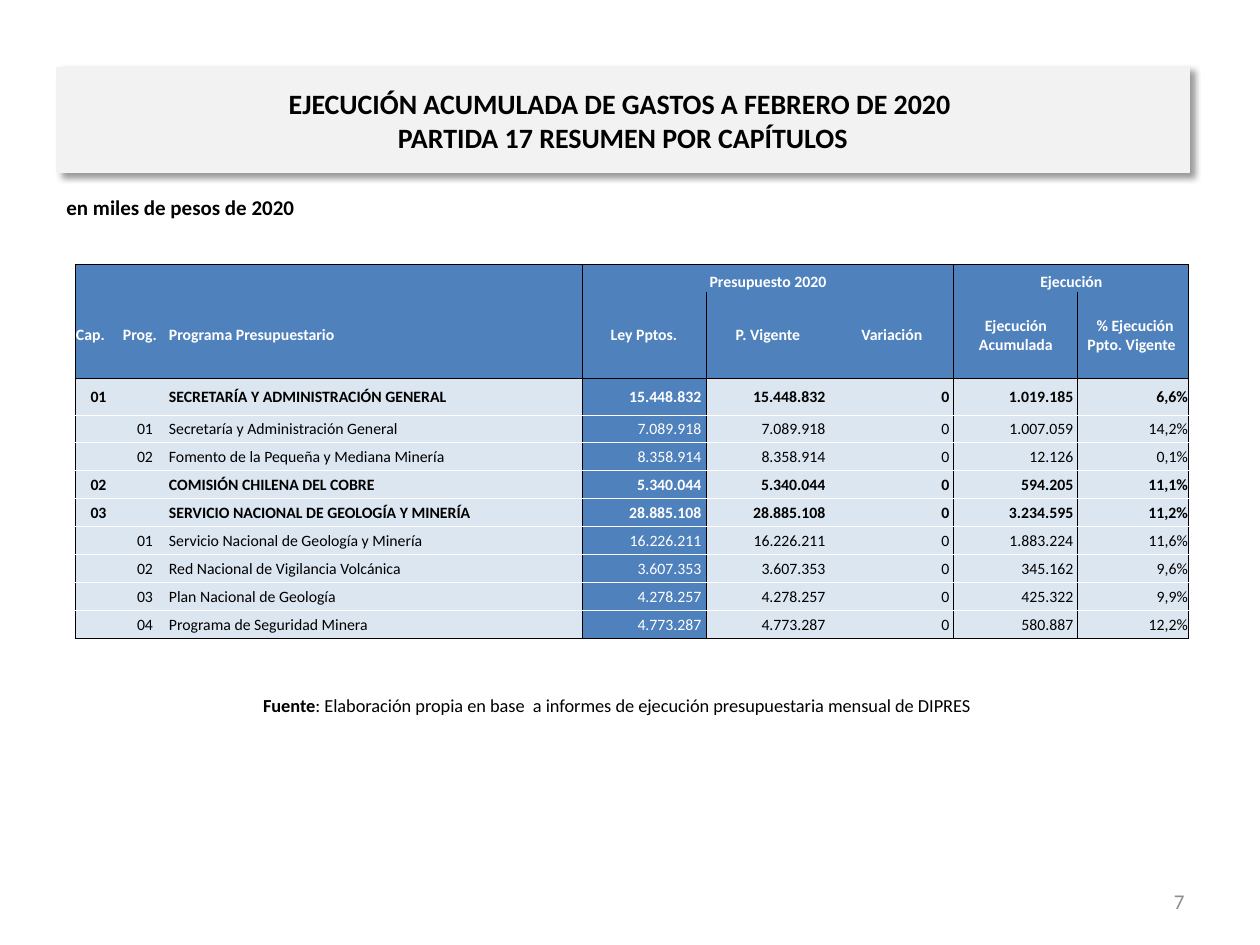
from dataclasses import dataclass

from lxml import etree
from pptx import Presentation
from pptx.dml.color import RGBColor
from pptx.enum.text import MSO_ANCHOR, MSO_AUTO_SIZE, PP_ALIGN
from pptx.oxml import parse_xml
from pptx.oxml.ns import nsdecls, qn
from pptx.util import Emu, Pt

LEFT, CENTER, RIGHT = PP_ALIGN.LEFT, PP_ALIGN.CENTER, PP_ALIGN.RIGHT
JUSTIFY = PP_ALIGN.JUSTIFY
TOP, MIDDLE, BOTTOM = MSO_ANCHOR.TOP, MSO_ANCHOR.MIDDLE, MSO_ANCHOR.BOTTOM
GROW = MSO_AUTO_SIZE.SHAPE_TO_FIT_TEXT
EMU_PER_PX = 914400 / 126
NO_GRID_STYLE = "{2D5ABB26-0587-4C30-8999-92F81FD0307C}"


@dataclass(frozen=True)
class Theme:
    font: str = "Calibri"
    black: str = "000000"
    white: str = "FFFFFF"
    banner: str = "F2F2F2"
    blue: str = "4F81BD"
    pale: str = "DCE6F1"
    gray: str = "8C8C8C"
    title_size: float = 16
    note_size: float = 12
    source_size: float = 10.5
    table_size: float = 9
    border_width: float = 0.5


def px(length):
    return Emu(round(length * EMU_PER_PX))


def rgb(color):
    return RGBColor.from_string(color)


class SlideBuilder:
    def __init__(self, page, theme):
        self.page = page
        self.theme = theme

    def place(self, box, left, top, width, height):
        box.left, box.top = px(left), px(top)
        box.width, box.height = px(width), px(height)

    def span(self, para, text, size, color, bold=False):
        span = para.add_run()
        span.text = text
        span.font.name = self.theme.font
        span.font.size = Pt(size)
        span.font.bold = bold
        span.font.color.rgb = rgb(color)

    def title(self, lines, *place):
        theme = self.theme
        box = self.page.shapes.title
        self.place(box, *place)
        box.fill.solid()
        box.fill.fore_color.rgb = rgb(theme.banner)
        box.line.color.rgb = rgb(theme.banner)
        box.line.width = Pt(0.75)
        box._element.spPr.append(parse_xml(
            f'<a:effectLst {nsdecls("a")}>'
            f'<a:outerShdw blurRad="{Pt(4)}" dist="{Pt(3)}" dir="2700000" algn="tl" '
            f'rotWithShape="0"><a:srgbClr val="{theme.black}"><a:alpha val="40000"/>'
            '</a:srgbClr></a:outerShdw></a:effectLst>'))
        frame = box.text_frame
        frame.vertical_anchor = MIDDLE
        frame.word_wrap = True
        frame.auto_size = GROW
        para = frame.paragraphs[0]
        para.alignment = CENTER
        for index, line in enumerate(lines):
            if index:
                para.add_line_break()
            self.span(para, line, theme.title_size, theme.black, bold=True)

    def text(self, spans, size, color, align, anchor, *place):
        box = self.page.shapes.add_textbox(0, 0, 0, 0)
        self.place(box, *place)
        frame = box.text_frame
        frame.word_wrap = True
        frame.vertical_anchor = anchor
        para = frame.paragraphs[0]
        para.alignment = align
        for text, bold in spans:
            self.span(para, text, size, color, bold)

    def table(self, left, top, widths, heights):
        frame = self.page.shapes.add_table(
            len(heights), len(widths), px(left), px(top),
            px(sum(widths)), px(sum(heights)))
        table = frame.table
        table.first_row = table.horz_banding = False
        frame._element.find(".//" + qn("a:tableStyleId")).text = NO_GRID_STYLE
        for column, width in zip(table.columns, widths):
            column.width = px(width)
        for row, height in zip(table.rows, heights):
            row.height = px(height)
        return table

    def cell(self, cell, text, fill, color, align, bold, anchor=MIDDLE):
        cell.fill.solid()
        cell.fill.fore_color.rgb = rgb(fill)
        cell.margin_left = cell.margin_right = cell.margin_top = px(1)
        cell.margin_bottom = 0
        cell.vertical_anchor = anchor
        para = cell.text_frame.paragraphs[0]
        para.alignment = align
        size = self.theme.table_size
        if text:
            self.span(para, text, size, color, bold)
        else:  # keeps an empty cell from stretching its row
            etree.SubElement(para._p, qn("a:endParaRPr"), sz=str(size * 100))

    def borders(self, cell, sides):
        """sides: (side letter, color) pairs in the order L, R, T, B."""
        properties = cell._tc.get_or_add_tcPr()
        for index, (side, color) in enumerate(sides):
            properties.insert(index, parse_xml(
                f'<a:ln{side} {nsdecls("a")} w="{Pt(self.theme.border_width)}">'
                f'<a:solidFill><a:srgbClr val="{color}"/></a:solidFill></a:ln{side}>'))


GROUPS = ["", "", "", "Presupuesto 2020", "", "", "Ejecución", ""]
HEADINGS = ["Cap.", "Prog.", "Programa Presupuestario", "Ley Pptos.", "P. Vigente",
            "Variación", "Ejecución Acumulada", " % Ejecución Ppto. Vigente "]
# Chapter, program, name, budget (both by law and current), executed, percentage
BUDGET = [
    ("01", "", "SECRETARÍA Y ADMINISTRACIÓN GENERAL", "15.448.832", "1.019.185", "6,6%"),
    ("", "01", "Secretaría y Administración General", "7.089.918", "1.007.059", "14,2%"),
    ("", "02", "Fomento de la Pequeña y Mediana Minería", "8.358.914", "12.126", "0,1%"),
    ("02", "", "COMISIÓN CHILENA DEL COBRE", "5.340.044", "594.205", "11,1%"),
    ("03", "", "SERVICIO NACIONAL DE GEOLOGÍA Y MINERÍA", "28.885.108", "3.234.595", "11,2%"),
    ("", "01", "Servicio Nacional de Geología y Minería", "16.226.211", "1.883.224", "11,6%"),
    ("", "02", "Red Nacional de Vigilancia Volcánica", "3.607.353", "345.162", "9,6%"),
    ("", "03", "Plan Nacional de Geología", "4.278.257", "425.322", "9,9%"),
    ("", "04", "Programa de Seguridad Minera", "4.773.287", "580.887", "12,2%"),
]
WIDTHS = [47, 46, 414] + [124] * 4 + [111]
HEIGHTS = [28, 86, 37] + [28] * 8
HEADER_ROWS = 2
LAW_COLUMN = 3
BLOCK_STARTS, BLOCK_ENDS = (0, 3, 6), (2, 5, 7)
BODY_ALIGN = [CENTER, CENTER, JUSTIFY] + [RIGHT] * 5


def budget_table(builder):
    theme = builder.theme
    table = builder.table(75, 264, WIDTHS, HEIGHTS)
    for start, end in zip(BLOCK_STARTS[1:], BLOCK_ENDS[1:]):
        table.cell(0, start).merge(table.cell(0, end))

    # Header rows
    for row, texts in enumerate((GROUPS, HEADINGS)):
        for column, text in enumerate(texts):
            builder.cell(table.cell(row, column), text, theme.blue, theme.white,
                         CENTER if column >= LAW_COLUMN else LEFT, True,
                         MIDDLE if row else BOTTOM)

    # Chapter and program rows
    for row, (chapter, program, name, budget, spent, share) in enumerate(BUDGET, HEADER_ROWS):
        amounts = [f"{amount} " for amount in (budget, budget, "0", spent)]
        for column, text in enumerate([chapter, program, name, *amounts, share]):
            law = column == LAW_COLUMN
            builder.cell(table.cell(row, column), text,
                         theme.blue if law else theme.pale,
                         theme.white if law else theme.black,
                         BODY_ALIGN[column], bool(chapter))

    # Black outlines around each block, white rules between body rows
    last = len(HEIGHTS)
    rules = {edge: theme.white for edge in range(HEADER_ROWS, last)}
    rules.update({0: theme.black, HEADER_ROWS: theme.black, last: theme.black})
    for row in range(last):
        for column in range(len(WIDTHS)):
            cell = table.cell(row, column)
            sides = []
            if column in BLOCK_STARTS:
                sides.append(("L", theme.black))
            if column + cell.span_width - 1 in BLOCK_ENDS:
                sides.append(("R", theme.black))
            sides += [(side, rules[edge]) for side, edge in (("T", row), ("B", row + 1))
                      if edge in rules]
            builder.borders(cell, sides)


def main():
    deck = Presentation()
    deck.slide_width, deck.slide_height = px(1260), px(945)
    theme = Theme()
    title_only = deck.slide_layouts[5]
    builder = SlideBuilder(deck.slides.add_slide(title_only), theme)

    # Page number, source and units
    builder.text([("7", False)], theme.note_size, theme.gray, RIGHT, MIDDLE,
                 903, 876, 294, 50)
    builder.text([("Fuente", True),
                  (": Elaboración propia en base  a informes de ejecución "
                   "presupuestaria mensual de DIPRES", False)],
                 theme.source_size, theme.black, CENTER, TOP, 60, 688, 1114, 50)
    builder.text([("en miles de pesos de 2020", True)], theme.note_size, theme.black,
                 LEFT, TOP, 54, 188, 1040, 47)

    # Title banner and table
    builder.title(["EJECUCIÓN ACUMULADA DE GASTOS A FEBRERO DE 2020 ",
                   "PARTIDA 17 RESUMEN POR CAPÍTULOS"], 57, 79, 1132, 82)
    budget_table(builder)
    deck.save("out.pptx")


if __name__ == "__main__":
    main()
